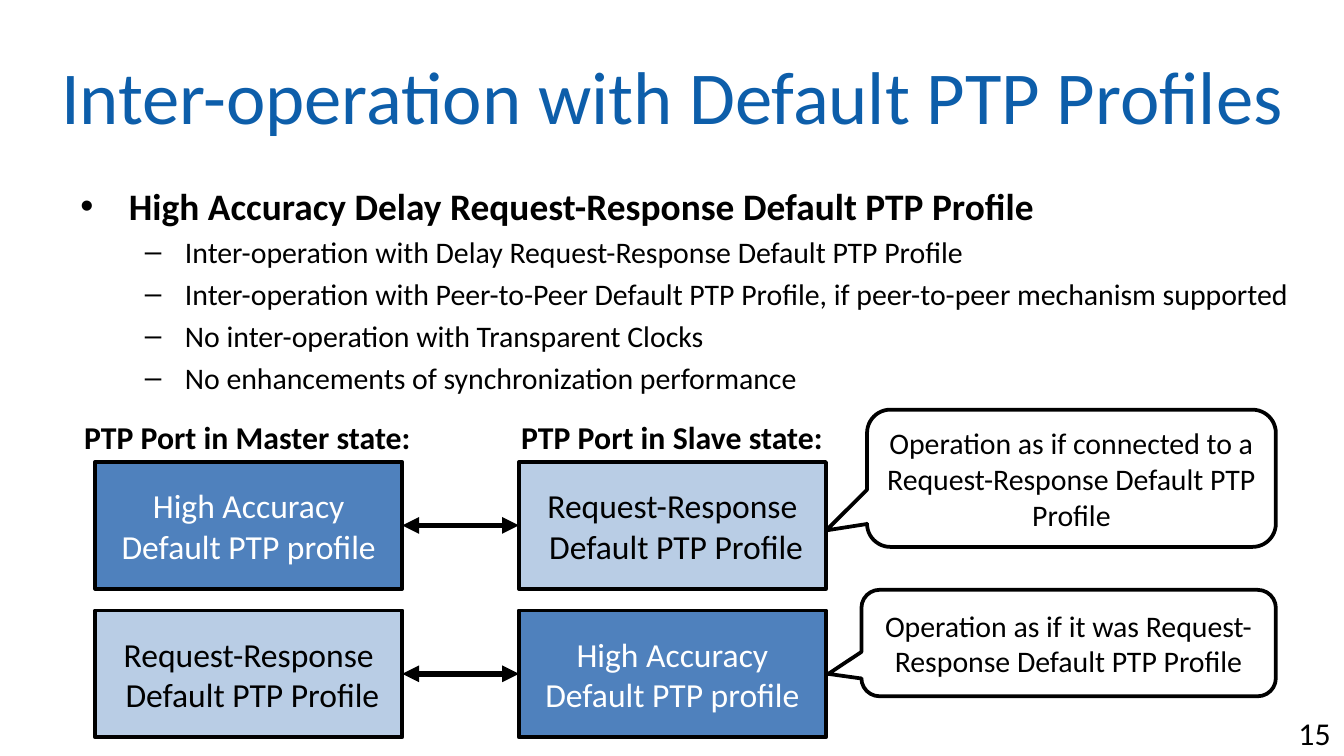
"""Builds the slide on inter-operation with the default PTP profiles."""
from lxml import etree
from pptx import Presentation
from pptx.dml.color import RGBColor
from pptx.enum.shapes import MSO_CONNECTOR, MSO_SHAPE
from pptx.enum.text import MSO_ANCHOR, PP_ALIGN
from pptx.oxml.ns import qn
from pptx.util import Pt

RECTANGLE = MSO_SHAPE.RECTANGLE
CALLOUT = MSO_SHAPE.ROUNDED_RECTANGULAR_CALLOUT
STRAIGHT = MSO_CONNECTOR.STRAIGHT
LEFT, CENTER = PP_ALIGN.LEFT, PP_ALIGN.CENTER
TOP, MIDDLE = MSO_ANCHOR.TOP, MSO_ANCHOR.MIDDLE

BLACK, WHITE = "000000", "FFFFFF"
TITLE_BLUE, DARK_BLUE, LIGHT_BLUE = "0D5EAA", "4F81BD", "B9CDE5"
HIGH_ACCURACY = (["High Accuracy Default PTP profile"], DARK_BLUE, WHITE)
REQUEST_RESPONSE = (["Request-Response", " Default PTP Profile"], LIGHT_BLUE, BLACK)
MASTER_LEFT, SLAVE_LEFT = 51, 278
BOX_WIDTH, BOX_HEIGHT = 164.5, 68


def color(code):
    return RGBColor.from_string(code)


class SlideBuilder:
    def __init__(self, page, font):
        self.page = page
        self.font = font

    def fill_text(self, shape, lines, size, code=BLACK, bold=False, align=CENTER, anchor=MIDDLE, wrap=True):
        frame = shape.text_frame
        frame.word_wrap = wrap
        frame.vertical_anchor = anchor
        frame.text = "\n".join(lines)
        for paragraph in frame.paragraphs:
            paragraph.alignment = align
            self.style(paragraph, size, code, bold)

    def style(self, paragraph, size, code, bold):
        paragraph.font.name = self.font
        paragraph.font.size = Pt(size)
        paragraph.font.bold = bold
        paragraph.font.color.rgb = color(code)

    def text(self, place, line, size, **look):
        box = self.page.shapes.add_textbox(*map(Pt, place))
        self.fill_text(box, [line], size, **look)

    def bullets(self, place, items):
        box = self.page.shapes.add_textbox(*map(Pt, place))
        frame = box.text_frame
        frame.word_wrap = True
        frame.text = "\n".join(line for line, level in items)
        levels = [("•", 20, 26, 26), ("–", 16, 56, 21.5)]
        for paragraph, (line, level) in zip(frame.paragraphs, items):
            mark, size, margin, hanging = levels[level]
            self.style(paragraph, size, BLACK, level == 0)
            paragraph.level = level
            paragraph.space_before = Pt(size * 0.2)
            properties = paragraph._p.get_or_add_pPr()
            properties.set("marL", str(Pt(margin)))
            properties.set("indent", str(-Pt(hanging)))
            bullet_font = etree.Element(qn("a:buFont"), typeface="Arial")
            bullet = etree.Element(qn("a:buChar"), char=mark)
            default_font = properties.find(qn("a:defRPr"))
            default_font.addprevious(bullet_font)
            default_font.addprevious(bullet)

    def shape(self, kind, place, lines, size, fill, code=BLACK, adjustments=()):
        shape = self.page.shapes.add_shape(kind, *map(Pt, place))
        shape.shadow.inherit = False
        shape.fill.solid()
        shape.fill.fore_color.rgb = color(fill)
        shape.line.color.rgb = color(BLACK)
        shape.line.width = Pt(2)
        for index, value in enumerate(adjustments):
            shape.adjustments[index] = value
        self.fill_text(shape, lines, size, code)

    def double_arrow(self, start, end, y):
        arrow = self.page.shapes.add_connector(STRAIGHT, Pt(start), Pt(y), Pt(end), Pt(y))
        arrow.line.color.rgb = color(BLACK)
        arrow.line.width = Pt(3)
        properties = arrow._element.spPr
        outline = properties.find(qn("a:ln"))
        for tag in ("a:headEnd", "a:tailEnd"):
            etree.SubElement(outline, qn(tag)).set("type", "triangle")
        etree.SubElement(properties, qn("a:effectLst"))


def main():
    deck = Presentation()
    deck.slide_width, deck.slide_height = Pt(720), Pt(405)
    slide = SlideBuilder(deck.slides.add_slide(deck.slide_layouts[6]), "Calibri")

    slide.text((0, 16.5, 720, 68), "Inter-operation with Default PTP Profiles", 40, code=TITLE_BLUE)
    slide.bullets((36, 94.5, 673, 267), [
        ("High Accuracy Delay Request-Response Default PTP Profile", 0),
        ("Inter-operation with Delay Request-Response Default PTP Profile", 1),
        ("Inter-operation with Peer-to-Peer Default PTP Profile, if peer-to-peer mechanism supported", 1),
        ("No inter-operation with Transparent Clocks", 1),
        ("No enhancements of synchronization performance", 1),
    ])

    headings = [
        ((37.5, 220.5, 190, 28), "PTP Port in Master state:"),
        ((271.5, 220.5, 177, 28), "PTP Port in Slave state:"),
    ]
    for place, line in headings:
        slide.text(place, line, 17, bold=True, anchor=TOP, wrap=False)

    rows = [(247.5, HIGH_ACCURACY, REQUEST_RESPONSE), (327, REQUEST_RESPONSE, HIGH_ACCURACY)]
    for top, master, slave in rows:
        for left, (lines, fill, code) in ((MASTER_LEFT, master), (SLAVE_LEFT, slave)):
            slide.shape(RECTANGLE, (left, top, BOX_WIDTH, BOX_HEIGHT), lines, 18, fill, code)
        slide.double_arrow(MASTER_LEFT + BOX_WIDTH, SLAVE_LEFT, top + BOX_HEIGHT / 2)

    callouts = [
        ((464.5, 219.5, 219, 73.5), "Operation as if connected to a Request-Response Default PTP Profile", (-0.6, 0.38, 0.17)),
        ((461.5, 316, 222, 57), "Operation as if it was Request-Response Default PTP Profile", (-0.58, 0.29, 0.17)),
    ]
    for place, line, adjustments in callouts:
        slide.shape(CALLOUT, place, [line], 16, WHITE, adjustments=adjustments)

    slide.text((688.5, 379, 31.5, 28), "15", 17, align=LEFT, anchor=TOP, wrap=False)
    deck.save("out.pptx")


if __name__ == "__main__":
    main()
